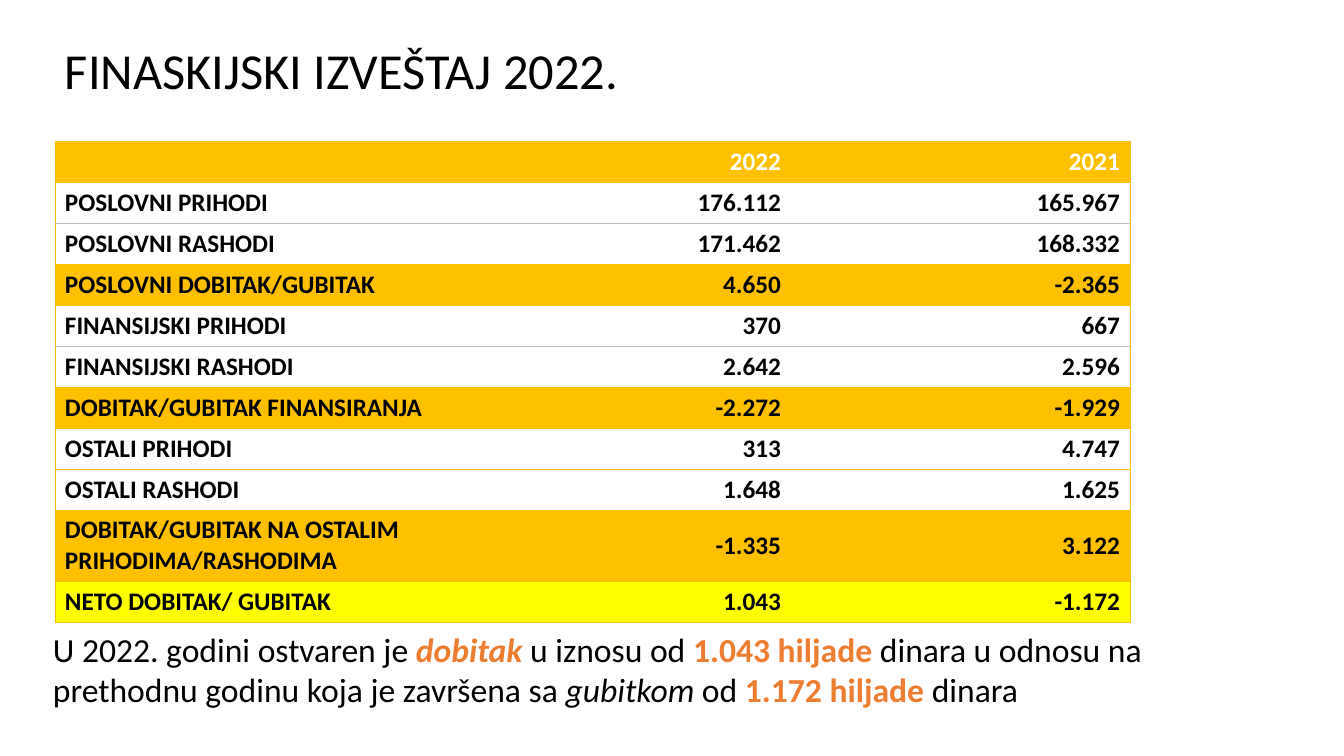
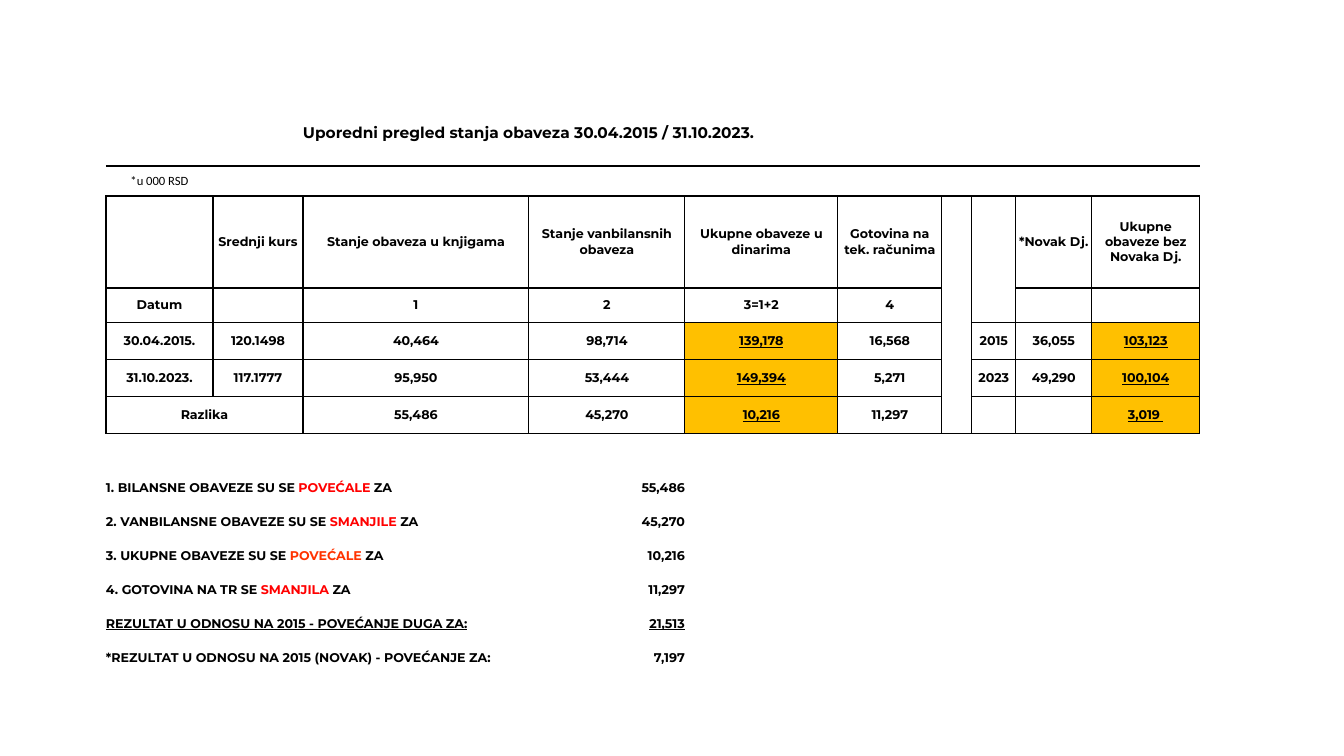
from collections.abc import Callable
from dataclasses import dataclass, field, replace

from lxml.etree import SubElement as Sub
from pptx import Presentation
from pptx.dml.color import RGBColor as Rgb
from pptx.enum.text import MSO_ANCHOR as Anchor, PP_ALIGN as Align
from pptx.oxml.ns import qn
from pptx.slide import Slide
from pptx.table import _Cell as Box
from pptx.text.text import _Paragraph as Para
from pptx.util import Pt

WIDE, HIGH = 1344, 756
SCALE = 12192000 / WIDE


@dataclass(frozen=True)
class Theme:
    black: str = "000000"
    white: str = "FFFFFF"
    gold: str = "FFC000"
    yellow: str = "FFFF00"
    orange: str = "ED7D31"
    red: str = "FF0000"
    flame: str = "FF3300"
    gray: str = "BFBFBF"
    sans: str = "Calibri"
    geo: str = "Montserrat"
    title: int = 36
    note: int = 24
    body: int = 18
    head: int = 11
    small: int = 9


THEME = Theme()


@dataclass(frozen=True)
class Font:
    size: int
    name: str = THEME.sans
    color: str = THEME.black
    bold: bool = False
    italic: bool = False
    under: bool = False


@dataclass(frozen=True)
class Run:
    text: str
    font: Font


@dataclass(frozen=True)
class Line:
    color: str
    width: float


@dataclass(frozen=True)
class Cell:
    runs: tuple[Run, ...] = ()
    fill: str | None = None
    align: Align = Align.LEFT
    anchor: Anchor = Anchor.MIDDLE


Edge = Callable[[int, int], Line | None]
Cells = dict[tuple[int, int], Cell]


@dataclass(frozen=True)
class Grid:
    left: int
    top: int
    cols: list[int]
    rows: list[int]
    cells: Cells
    across: Edge
    down: Edge
    pad: tuple[int, int] = (0, 0)
    spans: list[tuple[int, int, int, int]] = field(default_factory=list)


TITLE = Font(THEME.title)
NOTE = Font(THEME.note)
LOUD = replace(NOTE, color=THEME.orange, bold=True)
BODY = Font(THEME.body, bold=True)
SMALL = Font(THEME.small, THEME.geo, bold=True)
UNDER = replace(SMALL, under=True)


def px(value: int) -> int:
    return round(value * SCALE)


def write(para: Para, runs: tuple[Run, ...]) -> None:
    for item in runs:
        run = para.add_run()
        run.text = item.text
        font, look = run.font, item.font
        font.name, font.size = look.name, Pt(look.size)
        font.bold, font.italic = look.bold, look.italic
        font.underline = look.under
        font.color.rgb = Rgb.from_string(look.color)


def label(slide: Slide, box: tuple[int, int, int, int], runs: tuple[Run, ...]) -> None:
    frame = slide.shapes.add_textbox(*map(px, box)).text_frame
    frame.word_wrap = True
    write(frame.paragraphs[0], runs)


def border(box: Box, side: str, line: Line | None) -> None:
    edge = Sub(box._tc.get_or_add_tcPr(), qn(f"a:ln{side}"))
    if line is None:
        Sub(edge, qn("a:noFill"))
        return
    edge.set("w", str(Pt(line.width)))
    Sub(Sub(edge, qn("a:solidFill")), qn("a:srgbClr")).set("val", line.color)


def paint(box: Box, cell: Cell, pad: tuple[int, int]) -> None:
    box.margin_left = box.margin_right = px(pad[0])
    box.margin_top = box.margin_bottom = px(pad[1])
    box.vertical_anchor = cell.anchor
    if cell.fill:
        box.fill.solid()
        box.fill.fore_color.rgb = Rgb.from_string(cell.fill)
    else:
        box.fill.background()
    para = box.text_frame.paragraphs[0]
    para.alignment = cell.align
    write(para, cell.runs)
    if not cell.runs:
        Sub(para._p, qn("a:endParaRPr")).set("sz", str(THEME.small * 100))


def draw(slide: Slide, grid: Grid) -> None:
    size = (grid.left, grid.top, sum(grid.cols), sum(grid.rows))
    table = slide.shapes.add_table(
        len(grid.rows), len(grid.cols), *map(px, size)
    ).table
    table.first_row = table.horz_banding = False
    for col, width in zip(table.columns, grid.cols):
        col.width = px(width)
    for row, height in zip(table.rows, grid.rows):
        row.height = px(height)
    for r in range(len(grid.rows)):
        for c in range(len(grid.cols)):
            box = table.cell(r, c)
            border(box, "L", grid.down(r, c))
            border(box, "R", grid.down(r, c + 1))
            border(box, "T", grid.across(r, c))
            border(box, "B", grid.across(r + 1, c))
            paint(box, grid.cells.get((r, c), Cell()), grid.pad)
    for top, left, end, right in grid.spans:
        table.cell(top, left).merge(table.cell(end, right))


def report(slide: Slide) -> None:
    data = [
        ("", "2022", "2021"),
        ("POSLOVNI PRIHODI", "176.112", "165.967"),
        ("POSLOVNI RASHODI", "171.462", "168.332"),
        ("POSLOVNI DOBITAK/GUBITAK", "4.650", "-2.365"),
        ("FINANSIJSKI PRIHODI", "370", "667"),
        ("FINANSIJSKI RASHODI", "2.642", "2.596"),
        ("DOBITAK/GUBITAK FINANSIRANJA", "-2.272", "-1.929"),
        ("OSTALI PRIHODI", "313", "4.747"),
        ("OSTALI RASHODI", "1.648", "1.625"),
        ("DOBITAK/GUBITAK NA OSTALIM PRIHODIMA/RASHODIMA", "-1.335", "3.122"),
        ("NETO DOBITAK/ GUBITAK", "1.043", "-1.172"),
    ]
    last = len(data) - 1
    cells: Cells = {}
    for r, row in enumerate(data):
        fill = THEME.gold if r % 3 == 0 else THEME.white
        fill = THEME.yellow if r == last else fill
        font = BODY if r else replace(BODY, color=THEME.white)
        for c, text in enumerate(row):
            runs = (Run(text, font),) if text else ()
            cells[r, c] = Cell(runs, fill, Align.RIGHT if c else Align.LEFT)

    def across(row: int, col: int) -> Line:
        return Line(THEME.gray if row in (2, 5) else THEME.gold, 0.5)

    def down(row: int, col: int) -> Line | None:
        return Line(THEME.gold, 0.5) if col in (0, 3) else None

    rows = [71 if r == last - 1 else 41 for r in range(len(data))]
    draw(slide, Grid(55, 141, [425, 311, 339], rows, cells, across, down, (10, 5)))
    label(slide, (43, 624, 1233, 92), (
        Run("U 2022. godini ostvaren je ", NOTE),
        Run("dobitak ", replace(LOUD, italic=True)),
        Run("u iznosu od ", NOTE),
        Run("1.043 hiljade ", LOUD),
        Run("dinara u odnosu na prethodnu godinu koja je završena sa ", NOTE),
        Run("gubitkom", replace(NOTE, italic=True)),
        Run(" od ", NOTE),
        Run("1.172 hiljade ", LOUD),
        Run("dinara", NOTE),
    ))
    label(slide, (55, 34, 1159, 70), (Run("FINASKIJSKI IZVEŠTAJ 2022.", TITLE),))


def debts(slide: Slide) -> None:
    first, stop = 3, 8
    data = [
        ("", "Srednji kurs", "Stanje obaveza u knjigama",
         "Stanje vanbilansnih obaveza", "Ukupne obaveze u dinarima",
         "Gotovina na tek. računima", "", "", "*Novak Dj.",
         "Ukupne obaveze bez Novaka Dj."),
        ("Datum", "", "1", "2", "3=1+2", "4", "", "", "", ""),
        ("30.04.2015.", "120.1498", "40,464", "98,714", "139,178", "16,568",
         "", "2015", "36,055", "103,123"),
        ("31.10.2023.", "117.1777", "95,950", "53,444", "149,394", "5,271",
         "", "2023", "49,290", "100,104"),
        ("Razlika", "", "55,486", "45,270", "10,216", "11,297",
         "", "", "", "3,019 "),
    ]
    items = [
        ("1. BILANSNE OBAVEZE SU SE ", "POVEĆALE ", "ZA", THEME.red, "55,486"),
        ("2. VANBILANSNE OBAVEZE SU SE ", "SMANJILE", " ZA", THEME.red, "45,270"),
        ("3. UKUPNE OBAVEZE SU SE ", "POVEĆALE", " ZA", THEME.flame, "10,216"),
        ("4. GOTOVINA NA TR SE ", "SMANJILA", " ZA", THEME.red, "11,297"),
    ]
    sums = [
        ("REZULTAT U ODNOSU NA 2015 - POVEĆANJE DUGA ZA:", "21,513", UNDER),
        ("*REZULTAT U ODNOSU NA 2015 (NOVAK) - POVEĆANJE ZA:", "7,197", SMALL),
    ]
    head = Run(
        "Uporedni pregled stanja obaveza 30.04.2015 / 31.10.2023.",
        replace(SMALL, size=THEME.head),
    )
    cells: Cells = {
        (1, 3): Cell((head,), anchor=Anchor.TOP),
        (2, 1): Cell((Run("*u 000 RSD", Font(THEME.small)),), align=Align.CENTER),
    }
    for r, row in enumerate(data, first):
        for c, text in enumerate(row, 1):
            key = r >= 5 and c in (5, 10)
            runs = (Run(text, UNDER if key else SMALL),) if text else ()
            cells[r, c] = Cell(runs, THEME.gold if key else None, Align.CENTER)
    lines = [
        ((Run(lead, SMALL), Run(word, replace(SMALL, color=color)), Run(tail, SMALL)),
         Run(value, SMALL))
        for lead, word, tail, color, value in items
    ]
    lines += [((Run(text, font),), Run(value, font)) for text, value, font in sums]
    begin = stop + 1
    for r, (runs, value) in enumerate(lines, begin):
        cells[r, 1] = Cell(runs, anchor=Anchor.BOTTOM)
        cells[r, 4] = Cell((value,), align=Align.RIGHT, anchor=Anchor.BOTTOM)

    def across(row: int, col: int) -> Line | None:
        if not 1 <= col <= 10:
            return None
        if row == 2:
            return Line(THEME.black, 2)
        inner = col == 7 and first < row < stop
        if inner or (row, col) in ((4, 8), (0, 0)):
            return None
        return Line(THEME.black, 1) if first <= row <= stop else None

    def down(row: int, col: int) -> Line | None:
        shown = first <= row < stop and 1 <= col <= 11 and (row, col) != (7, 2)
        return Line(THEME.black, 1) if shown else None

    cols = [25, 107, 90, 226, 156, 153, 104, 30, 44, 76, 108, 39]
    rows = [27, 42, 30, 92, 35, 37, 37, 37, 28] + [34] * len(lines)
    spans = [(1, 3, 1, 5), (3, 7, 7, 7), (7, 1, 7, 2)]
    spans += [(r, 1, r, 3) for r in range(begin, begin + len(lines))]
    draw(slide, Grid(81, 97, cols, rows, cells, across, down, spans=spans))


def main() -> None:
    deck = Presentation()
    deck.slide_width, deck.slide_height = px(WIDE), px(HIGH)
    for build in (report, debts):
        build(deck.slides.add_slide(deck.slide_layouts[6]))
    deck.save("out.pptx")


if __name__ == "__main__":
    main()
